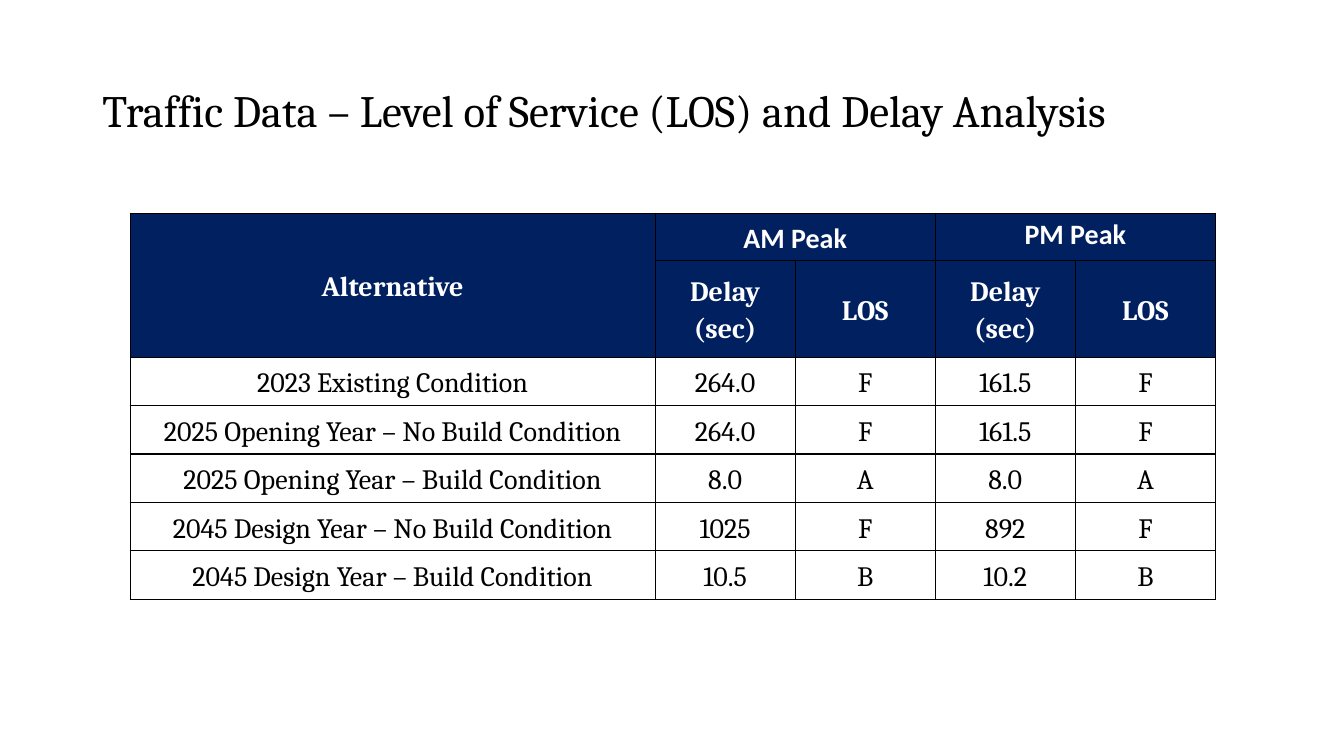
import pptx
import pptx.dml.color
import pptx.enum.text
import pptx.util
import lxml.etree
import pptx.oxml.ns

Cm = pptx.util.Cm
Anchor = pptx.enum.text.MSO_ANCHOR
Align = pptx.enum.text.PP_ALIGN
COLORS = {"navy": "002060", "white": "FFFFFF", "black": "000000"}
HEADER = [
    ["Alternative", "AM Peak", "", "PM Peak", ""],
    ["", "Delay\n(sec)", "LOS", "Delay\n(sec)", "LOS"],
]
RESULTS = [
    ["2023 Existing Condition", "264.0", "F", "161.5", "F"],
    ["2025 Opening Year – No Build Condition", "264.0", "F", "161.5", "F"],
    ["2025 Opening Year – Build Condition", "8.0", "A", "8.0", "A"],
    ["2045 Design Year – No Build Condition", "1025", "F", "892", "F"],
    ["2045 Design Year – Build Condition", "10.5", "B", "10.2", "B"],
]
COLUMN_WIDTHS = [13.23] + [3.53] * 4
ROW_HEIGHTS = [1.19, 2.44] + [1.22] * len(RESULTS)
MERGES = [((0, 0), (1, 0)), ((0, 1), (0, 2)), ((0, 3), (0, 4))]


class TrafficSlide:
    """Draws styled text and tables on one slide."""

    def __init__(self, page):
        self.page = page
        self.font = "Cambria"

    def set_text(self, frame, text, size, color, spacing, align, bold=False, font=None):
        frame.text = text
        for para in frame.paragraphs:
            para.alignment = align
            para.line_spacing = spacing
            for span in para.runs:
                style = {"name": font or self.font, "size": pptx.util.Pt(size), "bold": bold}
                for name, value in style.items():
                    setattr(span.font, name, value)
                span.font.color.rgb = pptx.dml.color.RGBColor.from_string(COLORS[color])

    def title(self, text, left, top, width, height):
        box = self.page.shapes.add_textbox(Cm(left), Cm(top), Cm(width), Cm(height))
        frame = box.text_frame
        frame.word_wrap = True
        frame.vertical_anchor = Anchor.MIDDLE
        self.set_text(frame, text, 32, "black", 0.9, Align.LEFT)

    def border(self, cell):
        properties = cell._tc.get_or_add_tcPr()
        qn = pptx.oxml.ns.qn
        for position, side in enumerate(("lnL", "lnR", "lnT", "lnB")):
            line = lxml.etree.Element(qn("a:" + side), w=str(pptx.util.Pt(1)))
            fill = lxml.etree.SubElement(line, qn("a:solidFill"))
            lxml.etree.SubElement(fill, qn("a:srgbClr"), val=COLORS["black"])
            properties.insert(position, line)

    def cell(self, cell, text, is_header, font, anchor):
        layout = {
            "margin_left": Cm(0.18), "margin_right": Cm(0.18),
            "margin_top": 0, "margin_bottom": 0, "vertical_anchor": anchor,
        }
        for name, value in layout.items():
            setattr(cell, name, value)
        if is_header:
            cell.fill.solid()
            cell.fill.fore_color.rgb = pptx.dml.color.RGBColor.from_string(COLORS["navy"])
        else:
            cell.fill.background()
        color = "white" if is_header else "black"
        self.set_text(cell.text_frame, text, 20, color, 1.15, Align.CENTER, is_header, font)
        self.border(cell)

    def table(self, left, top):
        rows = HEADER + RESULTS
        size = Cm(sum(COLUMN_WIDTHS)), Cm(sum(ROW_HEIGHTS))
        frame = self.page.shapes.add_table(
            len(rows), len(COLUMN_WIDTHS), Cm(left), Cm(top), *size)
        table = frame.table
        table.first_row = table.horz_banding = False
        for column, width in zip(table.columns, COLUMN_WIDTHS):
            column.width = Cm(width)
        for row, height in zip(table.rows, ROW_HEIGHTS):
            row.height = Cm(height)
        for row, texts in enumerate(rows):
            for column, text in enumerate(texts):
                font = "Calibri" if text.endswith("Peak") else self.font
                anchor = Anchor.TOP if text == "PM Peak" else Anchor.MIDDLE
                self.cell(table.cell(row, column), text, row < len(HEADER), font, anchor)
        for first, last in MERGES:
            table.cell(*first).merge(table.cell(*last))


def main():
    deck = pptx.Presentation()
    deck.slide_width, deck.slide_height = Cm(33.87), Cm(19.05)
    slide = TrafficSlide(deck.slides.add_slide(deck.slide_layouts[6]))
    slide.title("Traffic Data – Level of Service (LOS) and Delay Analysis", 2.33, 1.01, 29.21, 3.68)
    slide.table(3.28, 5.37)
    deck.save("out.pptx")


if __name__ == "__main__":
    main()
